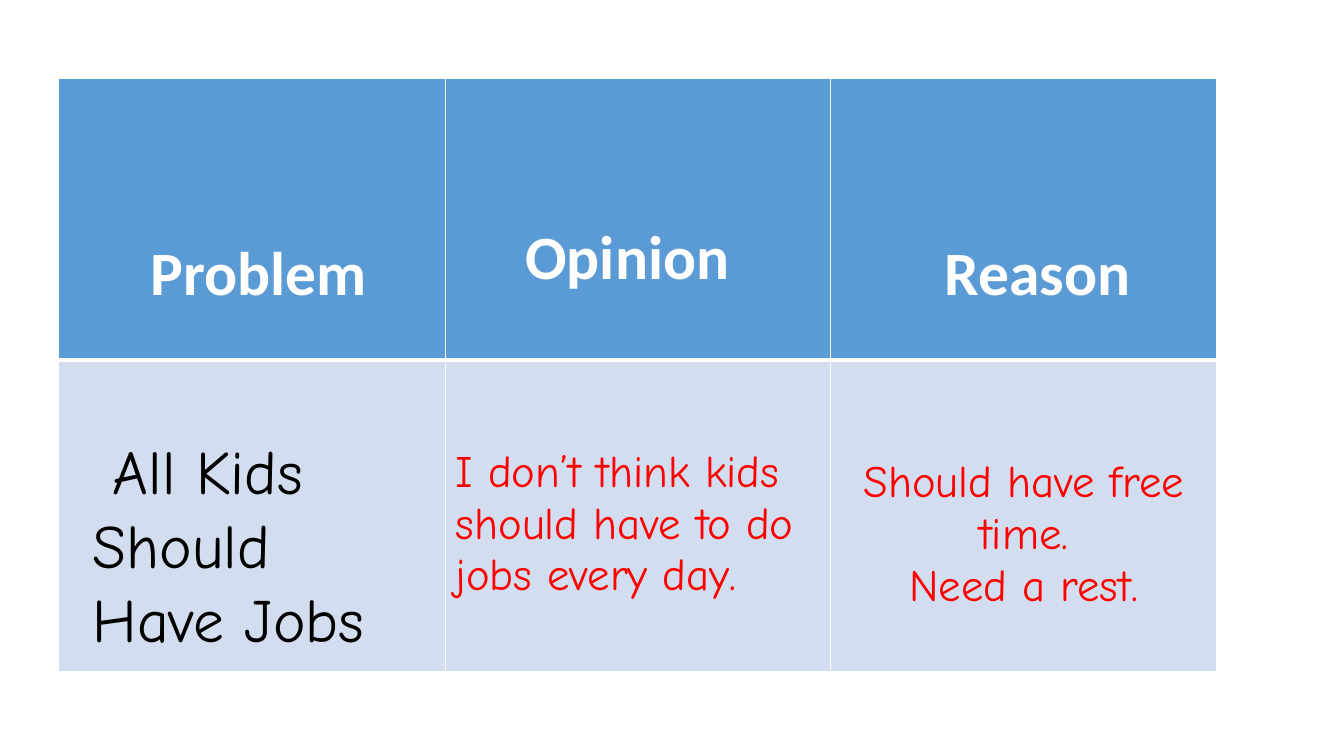
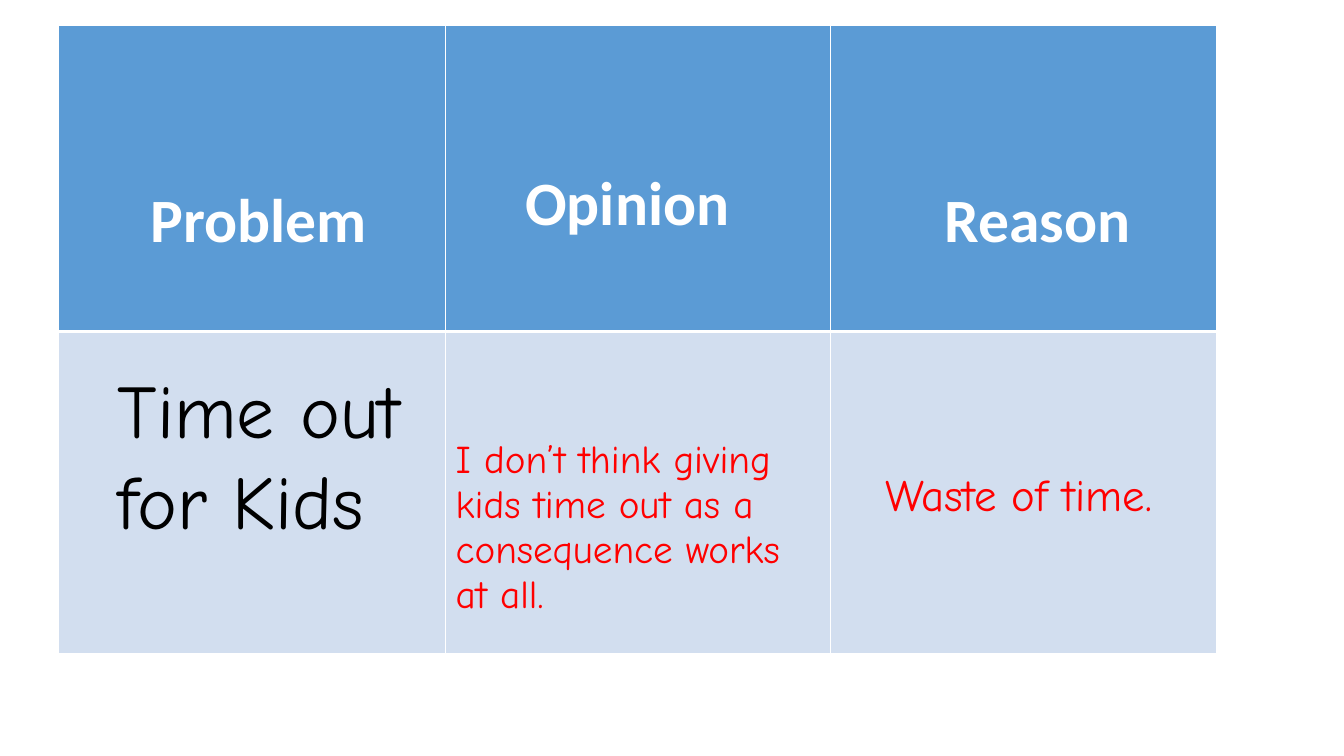
from dataclasses import dataclass, field
from typing import NamedTuple

from lxml.etree import SubElement
from pptx import Presentation
from pptx.dml.color import RGBColor
from pptx.enum.text import MSO_AUTO_SIZE, PP_ALIGN
from pptx.oxml.ns import qn
from pptx.slide import Slide
from pptx.table import _Cell
from pptx.text.text import TextFrame
from pptx.util import Inches, Pt


@dataclass(frozen=True)
class Theme:
    header_fill: RGBColor = field(default_factory=lambda: RGBColor(0x5B, 0x9B, 0xD5))
    body_fill: RGBColor = field(default_factory=lambda: RGBColor(0xD2, 0xDE, 0xEF))
    white: RGBColor = field(default_factory=lambda: RGBColor(0xFF, 0xFF, 0xFF))
    black: RGBColor = field(default_factory=lambda: RGBColor(0x00, 0x00, 0x00))
    red: RGBColor = field(default_factory=lambda: RGBColor(0xFF, 0x00, 0x00))
    header_font: str = "Calibri"
    body_font: str = "Comic Neue"
    header_size: int = 44
    answer_size: int = 32
    small_answer_size: int = 28
    large_problem_size: int = 54
    thin_line: float = 1
    thick_line: float = 3


THEME = Theme()
TABLE_LEFT = 0.58
COLUMN_WIDTHS = (3.84, 3.82, 3.83)


class TextStyle(NamedTuple):
    font: str
    size: int
    color: RGBColor
    bold: bool = False


class CellText(NamedTuple):
    lines: tuple[str, ...]
    style: TextStyle
    top: float
    left: float = 0.1
    alignment: PP_ALIGN = PP_ALIGN.LEFT


class ProblemBox(NamedTuple):
    text: str
    size: int
    position: tuple[float, float, float, float]
    first_line_indent: float = 0


class OpinionSlide(NamedTuple):
    table_top: float
    row_heights: tuple[float, float]
    opinion: CellText
    reason: CellText
    problem: ProblemBox


HEADER_STYLE = TextStyle(THEME.header_font, THEME.header_size, THEME.white, True)
ANSWER_STYLE = TextStyle(THEME.body_font, THEME.answer_size, THEME.red)
SMALL_ANSWER_STYLE = TextStyle(THEME.body_font, THEME.small_answer_size, THEME.red)

HEADERS = (
    CellText(("Problem",), HEADER_STYLE, 1.57, 0.24, PP_ALIGN.CENTER),
    CellText(("Opinion",), HEADER_STYLE, 1.41, 0.79),
    CellText(("Reason",), HEADER_STYLE, 1.57, 0.38, PP_ALIGN.CENTER),
)

SLIDES = (
    OpinionSlide(
        0.78,
        (2.79, 3.09),
        CellText(("I don’t think kids should have to do jobs every day.",), ANSWER_STYLE, 0.87),
        CellText(("Should have free time.", "Need a rest."), ANSWER_STYLE, 0.97,
                 alignment=PP_ALIGN.CENTER),
        ProblemBox("All Kids Should Have Jobs", THEME.header_size, (0.82, 4.25, 3.25, 2.32), 0.2),
    ),
    OpinionSlide(
        0.25,
        (3.04, 3.19),
        CellText(("I don’t think giving kids time out as a consequence works at all.",),
                 SMALL_ANSWER_STYLE, 1.06),
        CellText(("Waste of time.",), ANSWER_STYLE, 1.38, 0.54),
        ProblemBox("Time out for Kids", THEME.large_problem_size, (1.07, 3.55, 3.02, 2.83)),
    ),
)


def write_lines(text_frame: TextFrame, lines: tuple[str, ...], style: TextStyle,
                alignment: PP_ALIGN = PP_ALIGN.LEFT) -> None:
    for index, line in enumerate(lines):
        paragraph = text_frame.add_paragraph() if index else text_frame.paragraphs[0]
        paragraph.alignment = alignment
        run = paragraph.add_run()
        run.text = line
        run.font.name = style.font
        run.font.size = Pt(style.size)
        run.font.bold = style.bold
        run.font.color.rgb = style.color


def set_borders(cell: _Cell, top: float, bottom: float) -> None:
    properties = cell._tc.get_or_add_tcPr()
    widths = {"lnL": THEME.thin_line, "lnR": THEME.thin_line, "lnT": top, "lnB": bottom}
    for tag, width in widths.items():
        line = SubElement(properties, qn(f"a:{tag}"), w=str(Pt(width)))
        fill = SubElement(line, qn("a:solidFill"))
        SubElement(fill, qn("a:srgbClr"), val=str(THEME.white))


def fill_cell(cell: _Cell, content: CellText | None, is_header: bool) -> None:
    if is_header:
        set_borders(cell, THEME.thin_line, THEME.thick_line)
    else:
        set_borders(cell, THEME.thick_line, THEME.thin_line)
    cell.fill.solid()
    cell.fill.fore_color.rgb = THEME.header_fill if is_header else THEME.body_fill
    if content:
        cell.margin_top = Inches(content.top)
        cell.margin_left = Inches(content.left)
        write_lines(cell.text_frame, content.lines, content.style, content.alignment)


def add_opinion_table(slide: Slide, content: OpinionSlide) -> None:
    rows = (HEADERS, (None, content.opinion, content.reason))
    table = slide.shapes.add_table(
        len(rows), len(COLUMN_WIDTHS), Inches(TABLE_LEFT), Inches(content.table_top),
        Inches(sum(COLUMN_WIDTHS)), Inches(sum(content.row_heights)),
    ).table
    for column, width in zip(table.columns, COLUMN_WIDTHS):
        column.width = Inches(width)
    for row_index, (height, cells) in enumerate(zip(content.row_heights, rows)):
        table.rows[row_index].height = Inches(height)
        for column_index, cell_text in enumerate(cells):
            fill_cell(table.cell(row_index, column_index), cell_text, row_index == 0)


def add_problem_box(slide: Slide, problem: ProblemBox) -> None:
    text_frame = slide.shapes.add_textbox(*map(Inches, problem.position)).text_frame
    text_frame.word_wrap = True
    text_frame.auto_size = MSO_AUTO_SIZE.SHAPE_TO_FIT_TEXT
    write_lines(text_frame, (problem.text,), TextStyle(THEME.body_font, problem.size, THEME.black))
    if problem.first_line_indent:
        paragraph_properties = text_frame.paragraphs[0]._p.get_or_add_pPr()
        paragraph_properties.set("indent", str(Inches(problem.first_line_indent)))


def main() -> None:
    presentation = Presentation()
    presentation.slide_width = Inches(13.33)
    presentation.slide_height = Inches(7.5)
    for content in SLIDES:
        slide = presentation.slides.add_slide(presentation.slide_layouts[6])
        add_opinion_table(slide, content)
        add_problem_box(slide, content.problem)
    presentation.save("out.pptx")


if __name__ == "__main__":
    main()
